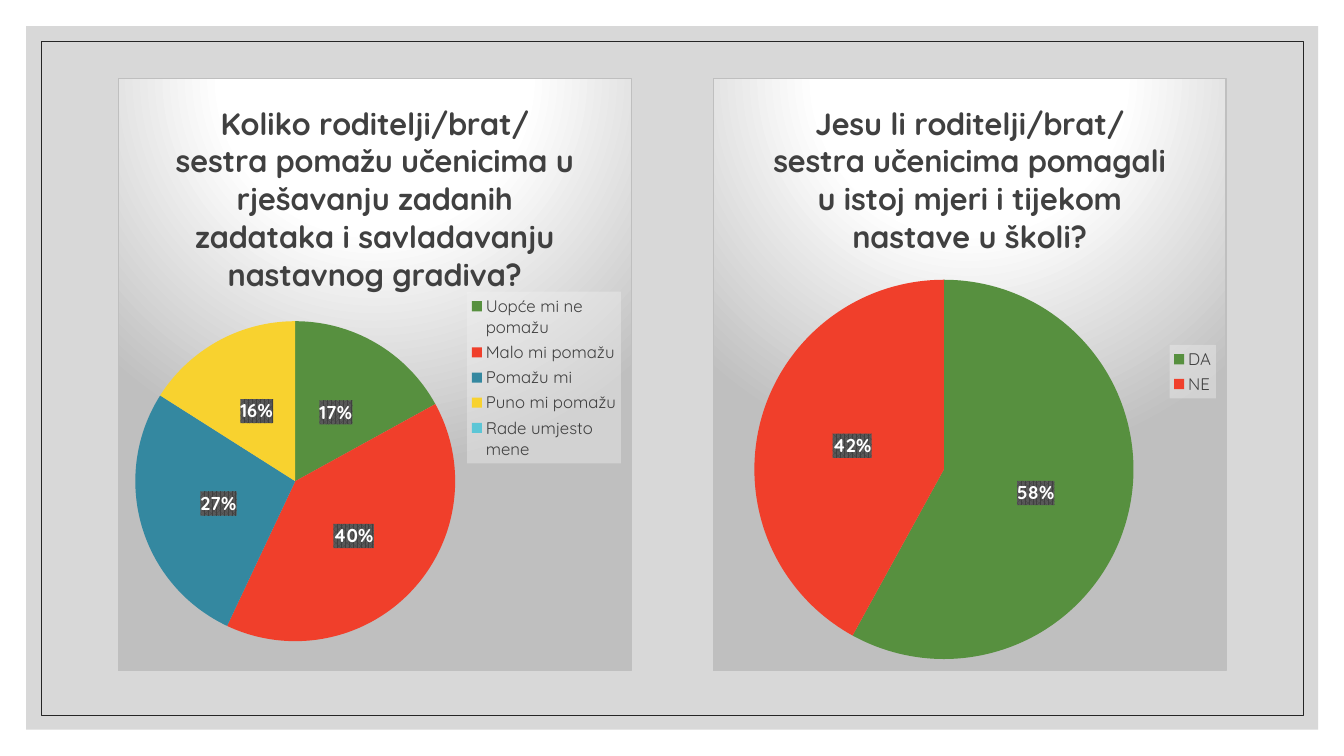
from pptx import Presentation
from pptx.chart.data import CategoryChartData
from pptx.dml.color import RGBColor
from pptx.enum.chart import XL_CHART_TYPE, XL_LABEL_POSITION, XL_LEGEND_POSITION
from pptx.enum.shapes import MSO_SHAPE
from pptx.oxml import parse_xml
from pptx.oxml.ns import nsdecls, qn
from pptx.util import Cm, Pt

PIE = XL_CHART_TYPE.PIE
RIGHT = XL_LEGEND_POSITION.RIGHT
CENTER = XL_LABEL_POSITION.CENTER
RECT = MSO_SHAPE.RECTANGLE

BLACK = RGBColor(0x00, 0x00, 0x00)
WHITE = RGBColor(0xFF, 0xFF, 0xFF)
DARK = RGBColor(0x40, 0x40, 0x40)
INK = RGBColor(0x26, 0x26, 0x26)
GRAY = RGBColor(0xBF, 0xBF, 0xBF)
MID = RGBColor(0x59, 0x59, 0x59)
PALE = RGBColor(0xF2, 0xF2, 0xF2)
SLICES = [
    RGBColor(0x57, 0x90, 0x3F),
    RGBColor(0xF0, 0x3F, 0x2B),
    RGBColor(0x34, 0x88, 0xA0),
    RGBColor(0xF8, 0xD2, 0x2F),
    RGBColor(0x5C, 0xC6, 0xD6),
]

FACE = "Quicksand"
BASE = {"name": FACE, "size": Pt(10), "color": BLACK}
TITLE = {"name": FACE, "size": Pt(22), "bold": True, "color": DARK}
KEY = {"name": FACE, "size": Pt(12), "color": DARK}
LABEL = {"name": FACE, "size": Pt(13.3), "bold": True, "color": WHITE}

# Chart boxes
TOP, WIDTH, HEIGHT = 1.96, 12.95, 14.96

PANEL = f"""<a:gradFill><a:gsLst>
<a:gs pos="0"><a:srgbClr val="{WHITE}"/></a:gs>
<a:gs pos="39000"><a:srgbClr val="{WHITE}"/></a:gs>
<a:gs pos="100000"><a:srgbClr val="{GRAY}"/></a:gs></a:gsLst>
<a:path path="circle"><a:fillToRect l="50000" t="-80000" r="50000" b="180000"/></a:path>
</a:gradFill><a:ln w="9525"><a:solidFill><a:srgbClr val="{GRAY}"/></a:solidFill></a:ln>"""
VEIL = f"""<a:solidFill><a:srgbClr val="{PALE}"><a:alpha val="39000"/></a:srgbClr>
</a:solidFill>"""
STRIPES = f"""<a:pattFill prst="pct75"><a:fgClr><a:srgbClr val="{DARK}"/></a:fgClr>
<a:bgClr><a:srgbClr val="{MID}"/></a:bgClr></a:pattFill>"""


def style(font, look):
    for name, value in look.items():
        if name == "color":
            font.color.rgb = value
        else:
            setattr(font, name, value)


def paint(body):
    return parse_xml(f'<c:spPr {nsdecls("c", "a")}>{body}</c:spPr>')


def layout(box, inner=False):
    target = '<c:layoutTarget val="inner"/>' if inner else ""
    modes = "".join(f'<c:{side}Mode val="edge"/>' for side in "xy")
    sizes = "".join(f'<c:{key} val="{value}"/>' for key, value in zip("xywh", box))
    return parse_xml(
        f'<c:layout {nsdecls("c")}><c:manualLayout>{target}{modes}{sizes}'
        "</c:manualLayout></c:layout>"
    )


def drop(parent, tag):
    for child in parent.findall(qn(tag)):
        parent.remove(child)


def add_frame(slide, left, width, height):
    frame = slide.shapes.add_shape(RECT, Cm(left), Cm(left), Cm(width), Cm(height))
    frame.shadow.inherit = False
    return frame


def add_title(chart, text):
    chart.has_title = True
    frame = chart.chart_title.text_frame
    frame.text = text
    style(frame.paragraphs[0].runs[0].font, TITLE)
    chart.chart_title.include_in_layout = False


def add_legend(chart, box):
    chart.has_legend = True
    legend = chart.legend
    legend.position = RIGHT
    legend.include_in_layout = False
    style(legend.font, KEY)
    root = chart._chartSpace.chart.find(qn("c:legend"))
    drop(root, "c:layout")
    overlay = root.find(qn("c:overlay"))
    overlay.addprevious(layout(box))
    overlay.addnext(paint(VEIL))


def add_labels(series, values):
    labels = series.data_labels
    labels.show_percentage = True
    labels.show_value = False
    labels.number_format = "0%"
    labels.number_format_is_linked = False
    labels.position = CENTER
    style(labels.font, LABEL)
    root = series._element.find(qn("c:dLbls"))
    root.find(qn("c:txPr")).addprevious(paint(STRIPES))
    # Empty slices carry no label
    empty = [i for i, value in enumerate(values) if not value]
    for place, i in enumerate(empty):
        root.insert(place, parse_xml(
            f'<c:dLbl {nsdecls("c")}><c:idx val="{i}"/><c:delete val="1"/></c:dLbl>'
        ))


def add_pie(slide, left, title, name, data, plot_box, key_box):
    source = CategoryChartData()
    source.categories = list(data)
    source.add_series(name, list(data.values()))
    chart = slide.shapes.add_chart(
        PIE, Cm(left), Cm(TOP), Cm(WIDTH), Cm(HEIGHT), source
    ).chart
    style(chart.font, BASE)
    add_title(chart, title)
    add_legend(chart, key_box)

    # Slices
    plot = chart.plots[0]
    plot.vary_by_categories = True
    series = plot.series[0]
    for i, color in enumerate(SLICES[:len(data)]):
        fill = series.points[i].format.fill
        fill.solid()
        fill.fore_color.rgb = color
    add_labels(series, list(data.values()))

    # Plot place and panel fill
    root = chart._chartSpace.chart
    area = root.find(qn("c:plotArea"))
    drop(area, "c:layout")
    area.insert(0, layout(plot_box, inner=True))
    root.addnext(paint(PANEL))


def main():
    deck = Presentation()
    deck.slide_width, deck.slide_height = Cm(33.87), Cm(19.05)
    slide = deck.slides.add_slide(deck.slide_layouts[6])

    # Backdrop and thin frame
    back = add_frame(slide, 0.66, 32.56, 17.73)
    back.fill.solid()
    back.fill.fore_color.rgb = GRAY
    tint = back._element.spPr.find(qn("a:solidFill"))[0]
    tint.append(parse_xml(f'<a:alpha {nsdecls("a")} val="60000"/>'))
    back.line.fill.background()
    edge = add_frame(slide, 1.04, 31.8, 16.99)
    edge.fill.background()
    edge.line.color.rgb = INK
    edge.line.width = Pt(0.5)

    # Help at home
    add_pie(
        slide, 2.97,
        "Koliko roditelji/brat/sestra pomažu učenicima u rješavanju zadanih "
        "zadataka i savladavanju nastavnog gradiva?",
        "Series 1",
        {"Uopće mi ne pomažu": 17, "Malo mi pomažu": 40, "Pomažu mi": 27,
         "Puno mi pomažu": 16, "Rade umjesto mene": 0},
        (0.03, 0.41, 0.63, 0.54), (0.68, 0.36, 0.3, 0.29),
    )

    # Help during school
    question = ("Jesu li roditelji/brat/sestra učenicima pomagali u istoj mjeri "
                "i tijekom nastave u školi?")
    add_pie(
        slide, 17.96, question, question, {"DA": 58, "NE": 42},
        (0.08, 0.34, 0.74, 0.64), (0.89, 0.45, 0.09, 0.09),
    )
    deck.save("out.pptx")


if __name__ == "__main__":
    main()
